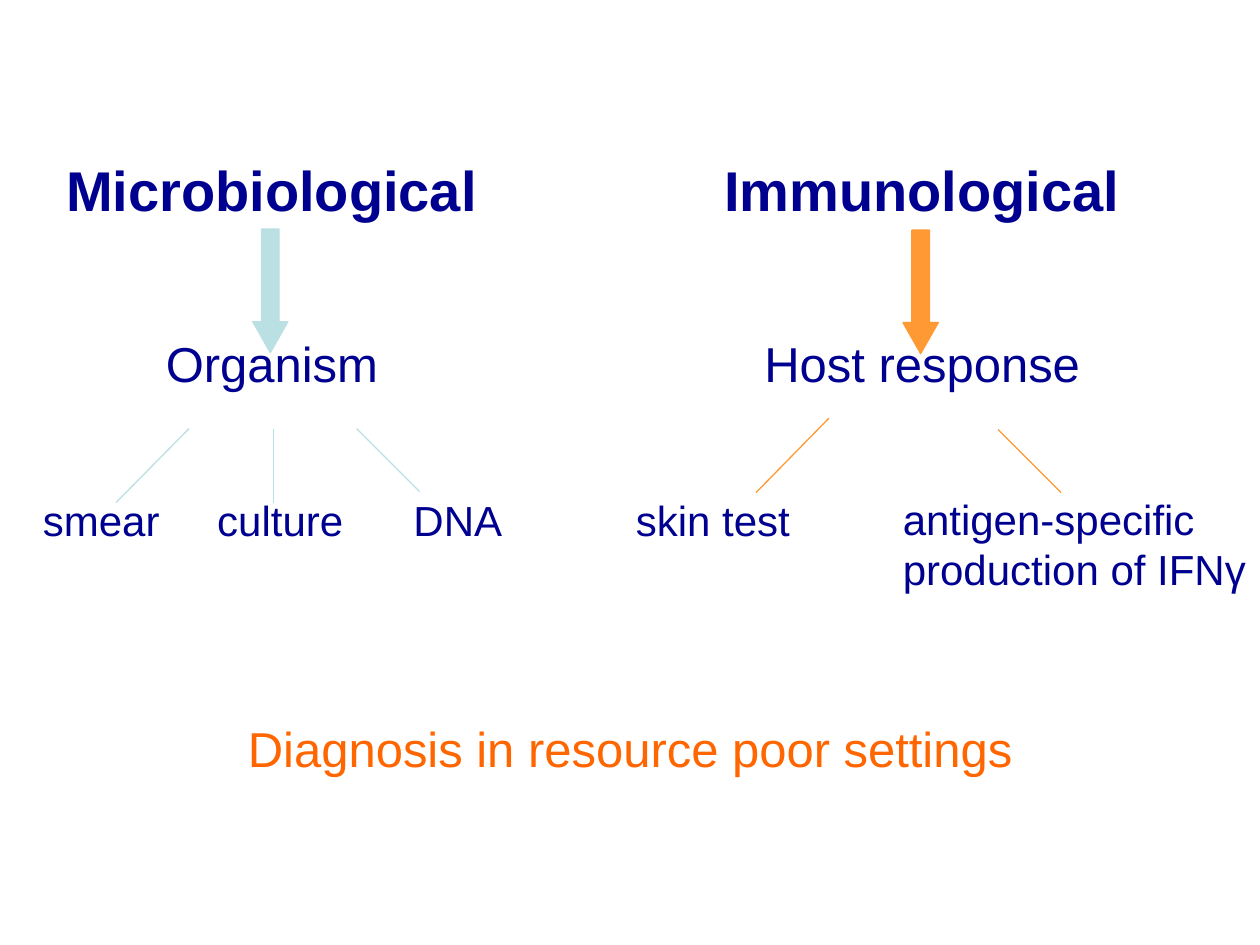
from lxml import etree
from pptx import Presentation
from pptx.dml.color import RGBColor
from pptx.enum.shapes import MSO_CONNECTOR, MSO_SHAPE
from pptx.enum.text import MSO_ANCHOR, MSO_AUTO_SIZE, PP_ALIGN
from pptx.oxml.ns import qn
from pptx.util import Cm, Pt

STRAIGHT = MSO_CONNECTOR.STRAIGHT
DOWN_ARROW = MSO_SHAPE.DOWN_ARROW
MIDDLE = MSO_ANCHOR.MIDDLE
NO_FIT = MSO_AUTO_SIZE.NONE
CENTER, LEFT = PP_ALIGN.CENTER, PP_ALIGN.LEFT

COLORS = {"navy": "000090", "teal": "BBE0E3", "amber": "FF9933", "orange": "FF6600"}
FONT = "Arial"
HEADING_Y, SUBJECT_Y, TEST_Y = 3.82, 7.31, 10.48

BRANCHES = [
    {
        "heading": "Microbiological", "subject": "Organism", "x": 5.48,
        "color": "teal", "arrow_top": 4.62,
        "lines": [(3.81, 8.64, 2.34, 10.13), (5.51, 8.64, 5.51, 10.13),
                  (7.19, 8.64, 8.46, 9.91)],
        "tests": [("smear", 2.04), ("culture", 5.65), ("DNA", 9.23)],
    },
    {
        "heading": "Immunological", "subject": "Host response", "x": 18.59,
        "color": "amber", "arrow_top": 4.64,
        "lines": [(16.71, 8.43, 15.24, 9.93), (20.12, 8.66, 21.39, 9.93)],
        "tests": [("skin test", 14.37)],
    },
]


def rgb(name):
    return RGBColor.from_string(COLORS[name])


def set_text(sp, text, size, color="navy", bold=False, align=CENTER):
    tf = sp.text_frame
    tf.text = text
    tf.word_wrap = True
    tf.auto_size = NO_FIT
    tf.vertical_anchor = MIDDLE
    tf.margin_left = tf.margin_right = tf.margin_top = tf.margin_bottom = 0
    for p in tf.paragraphs:
        p.alignment = align
        for r in p.runs:
            r.font.name = FONT
            r.font.size = Pt(size)
            r.font.bold = bold
            r.font.color.rgb = rgb(color)


def add_label(slide, text, x, y, width, size, height=1.3, **style):
    sp = slide.shapes.add_textbox(
        Cm(x - width / 2), Cm(y - height / 2), Cm(width), Cm(height))
    set_text(sp, text, size, **style)


def add_arrow(slide, x, top, color):
    width, height = 0.71, 2.49
    sp = slide.shapes.add_shape(
        DOWN_ARROW, Cm(x - width / 2), Cm(top), Cm(width), Cm(height))
    sp.adjustments[0] = 0.5
    sp.adjustments[1] = 0.88
    sp.shadow.inherit = False
    sp.fill.solid()
    sp.fill.fore_color.rgb = rgb(color)
    sp.line.color.rgb = rgb(color)
    sp.line.width = Pt(0.75)


def add_line(slide, points, color):
    line = slide.shapes.add_connector(STRAIGHT, *(Cm(v) for v in points))
    line.line.color.rgb = rgb(color)
    line.line.width = Pt(0.75)
    etree.SubElement(line._element.spPr, qn("a:effectLst"))


def add_branch(slide, branch):
    x, color = branch["x"], branch["color"]
    add_label(slide, branch["heading"], x, HEADING_Y, 10, 32, bold=True)
    add_arrow(slide, x - 0.03, branch["arrow_top"], color)
    add_label(slide, branch["subject"], x, SUBJECT_Y, 8, 28)
    for points in branch["lines"]:
        add_line(slide, points, color)
    for text, test_x in branch["tests"]:
        add_label(slide, text, test_x, TEST_Y, 3.5, 24)


def set_title(slide, text):
    sp = slide.shapes.title
    sp.left, sp.top, sp.width, sp.height = Cm(4.33), Cm(14.35), Cm(16.74), Cm(1.45)
    set_text(sp, text, 28, color="orange")


def main():
    prs = Presentation()
    prs.slide_width, prs.slide_height = Cm(25.4), Cm(19.05)
    slide = prs.slides.add_slide(prs.slide_layouts[5])
    for branch in BRANCHES:
        add_branch(slide, branch)
    add_label(slide, "antigen-specific\nproduction of IFNγ", 21.75, 10.96, 7.1, 24,
              height=2.2, align=LEFT)
    set_title(slide, "Diagnosis in resource poor settings")
    prs.save("out.pptx")


if __name__ == "__main__":
    main()
